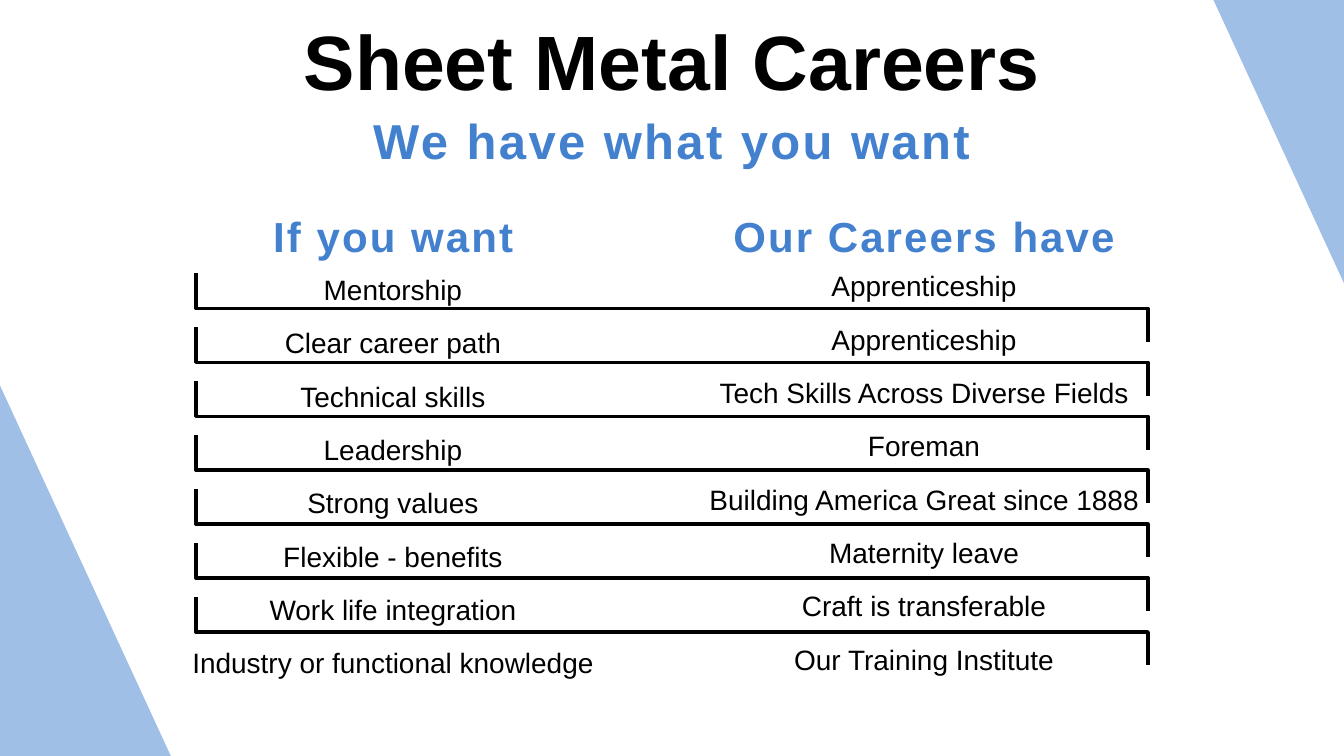
from lxml import etree
from pptx import Presentation
from pptx.dml.color import RGBColor
from pptx.enum.text import MSO_ANCHOR, MSO_AUTO_SIZE, PP_ALIGN
from pptx.oxml.ns import qn
from pptx.util import Inches, Pt

CENTER = PP_ALIGN.CENTER
TOP, BOTTOM = MSO_ANCHOR.TOP, MSO_ANCHOR.BOTTOM
FIXED_SIZE = MSO_AUTO_SIZE.NONE
BLACK, BLUE = "000000", "4381CF"
color = RGBColor.from_string


def write(box, area, lines, size, hex_color, bold=True, anchor=TOP, wrap=True,
          spacing=0.8, gap=0, tracking=0):
    box.left, box.top, box.width, box.height = [Inches(value) for value in area]
    frame = box.text_frame
    frame.auto_size = FIXED_SIZE
    frame.word_wrap = wrap
    frame.vertical_anchor = anchor
    frame.margin_left = frame.margin_right = Inches(0.06)
    frame.margin_top = frame.margin_bottom = Inches(0.06)
    frame.text = "\n".join(lines)
    for index, para in enumerate(frame.paragraphs):
        para.alignment = CENTER
        para.line_spacing = spacing
        para.space_before = Pt(gap if index else 0)
        para.font.name = "Arial"
        para.font.size = Pt(size)
        para.font.bold = bold
        para.font.color.rgb = color(hex_color)
        if tracking:
            for span in para.runs:
                span.font._element.set("spc", str(int(tracking * 100)))


def outline(points, close):
    points = [(Inches(x), Inches(y)) for x, y in points]
    builder = page.shapes.build_freeform(*points[0])
    builder.add_line_segments(points[1:], close=close)
    shape = builder.convert_to_shape()
    shape.shadow.inherit = False
    return shape


deck = Presentation()
deck.slide_width, deck.slide_height = Inches(26.67), Inches(15)
page = deck.slides.add_slide(deck.slide_layouts[5])

write(page.shapes.title, (0.95, 0.57, 24.77, 1.59), ["Sheet Metal Careers"], 110, BLACK)
subtitle = page.shapes.add_textbox(0, 0, 0, 0)
write(subtitle, (0.95, 2.35, 24.77, 1.05), ["We have what you want"], 70, BLUE, tracking=3.5)

wants = ["Mentorship", "Clear career path", "Technical skills", "Leadership",
         "Strong values", "Flexible - benefits", "Work life integration",
         "Industry or functional knowledge"]
offers = ["Apprenticeship", "Apprenticeship", "Tech Skills Across Diverse Fields",
          "Foreman", "Building America Great since 1888", "Maternity leave",
          "Craft is transferable", "Our Training Institute"]
columns = [
    ("If you want", (5.32, 4.31, 4.97, 0.92), wants, (3.75, 5.42, 8.09, 8.19)),
    ("Our Careers have", (14.44, 4.31, 7.8, 0.92), offers, (13.96, 5.35, 8.75, 8.2)),
]
for heading, heading_area, entries, entries_area in columns:
    heading_box = page.shapes.add_textbox(0, 0, 0, 0)
    write(heading_box, heading_area, [heading], 60, BLUE, anchor=BOTTOM, wrap=False,
          tracking=3)
    entries_box = page.shapes.add_textbox(0, 0, 0, 0)
    write(entries_box, entries_area, entries, 40, BLACK, bold=False, wrap=False,
          spacing=0.9, gap=33)

left, right, first_top, pitch = 3.89, 22.78, 5.42, 1.07
for row in range(len(wants) - 1):
    top = first_top + row * pitch
    bracket = outline([(left, top), (left, top + 0.7), (right, top + 0.7),
                       (right, top + 1.36)], close=False)
    bracket.fill.background()
    bracket.line.color.rgb = color(BLACK)
    bracket.line.width = Pt(5)

corners = [
    [(24.08, 0), (26.67, 0), (26.67, 5.62)],
    [(0, 7.65), (3.39, 15), (0, 15)],
]
for points in corners:
    corner = outline(points, close=True)
    corner.fill.solid()
    corner.fill.fore_color.rgb = color(BLUE)
    corner.line.fill.background()
    fill_color = corner._element.spPr.find(".//" + qn("a:srgbClr"))
    etree.SubElement(fill_color, qn("a:alpha"), val="50000")

deck.save("out.pptx")
